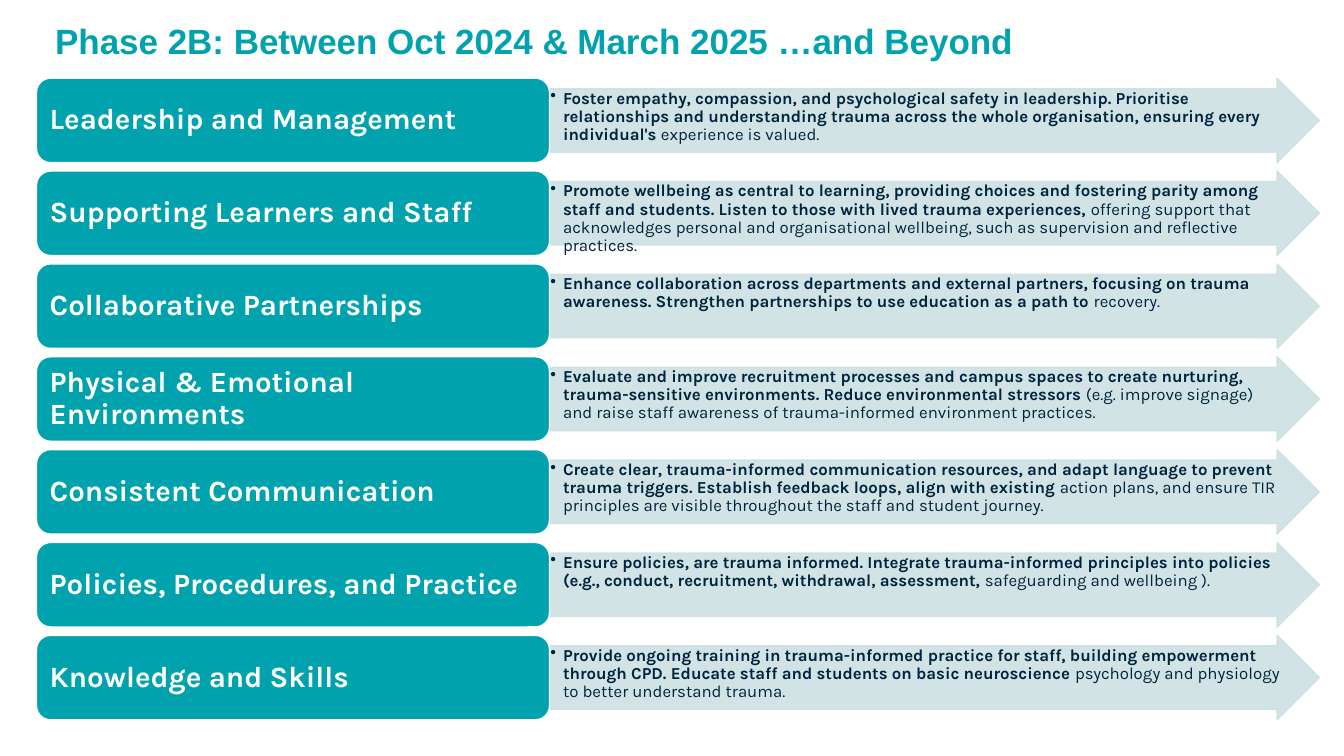
from lxml import etree
from pptx import Presentation
from pptx.dml.color import RGBColor
from pptx.enum.shapes import MSO_SHAPE
from pptx.enum.text import MSO_ANCHOR, PP_ALIGN
from pptx.oxml.ns import qn
from pptx.util import Cm, Pt

ARROW, ROUNDED = MSO_SHAPE.RIGHT_ARROW, MSO_SHAPE.ROUNDED_RECTANGLE
TOP, MIDDLE = MSO_ANCHOR.TOP, MSO_ANCHOR.MIDDLE
LEFT = PP_ALIGN.LEFT

COLOURS = {"teal": "00A2AD", "pale": "CCE0E3", "navy": "00243E", "white": "FFFFFF"}

# Row grid, in centimetres
FIRST_TOP, ROW_PITCH, ROW_HEIGHT = 1.97, 2.34, 2.13
THEME_LEFT, THEME_WIDTH = 0.92, 12.93
ACTION_LEFT, ACTION_WIDTH = 13.85, 19.4

TITLE = "Phase 2B: Between Oct 2024 & March 2025 …and Beyond"

# Theme, bold part of the action, plain part of the action
THEMES = [
    ("Leadership and Management",
     "Foster empathy, compassion, and psychological safety in leadership. Prioritise "
     "relationships and understanding trauma across the whole organisation, ensuring "
     "every individual's ",
     "experience is valued."),
    ("Supporting Learners and Staff",
     "Promote wellbeing as central to learning, providing choices and fostering parity "
     "among staff and students. Listen to those with lived trauma experiences, ",
     "offering support that acknowledges personal and organisational wellbeing, such as "
     "supervision and reflective practices."),
    ("Collaborative Partnerships",
     "Enhance collaboration across departments and external partners, focusing on trauma "
     "awareness. Strengthen partnerships to use education as a path to ",
     "recovery."),
    ("Physical & Emotional Environments",
     "Evaluate and improve recruitment processes and campus spaces to create nurturing, "
     "trauma-sensitive environments. Reduce environmental stressors ",
     "(e.g. improve signage) and raise staff awareness of trauma-informed environment "
     "practices."),
    ("Consistent Communication",
     "Create clear, trauma-informed communication resources, and adapt language to prevent "
     "trauma triggers. Establish feedback loops, align with existing ",
     "action plans, and ensure TIR principles are visible throughout the staff and student "
     "journey."),
    ("Policies, Procedures, and Practice",
     "Ensure policies, are trauma informed. Integrate trauma-informed principles into "
     "policies (e.g., conduct, recruitment, withdrawal, assessment, ",
     "safeguarding and wellbeing )."),
    ("Knowledge and Skills",
     "Provide ongoing training in trauma-informed practice for staff, building empowerment "
     "through CPD. Educate staff and students on basic neuroscience ",
     "psychology and physiology to better understand trauma."),
]


def rgb(name):
    return RGBColor.from_string(COLOURS[name])


def add_bullet(paragraph, indent):
    properties = paragraph._p.get_or_add_pPr()
    properties.set("marL", str(Cm(indent)))
    properties.set("indent", str(-Cm(indent)))
    etree.SubElement(properties, qn("a:buChar"), char="•")


def write(shape, bold_text, plain_text="", *, size, colour, font="Karla", anchor=MIDDLE,
          side_inset=0.23, end_inset=0.1, spacing=0.9, bullet_indent=None):
    frame = shape.text_frame
    frame.word_wrap = True
    frame.vertical_anchor = anchor
    frame.margin_left = frame.margin_right = Cm(side_inset)
    frame.margin_top = frame.margin_bottom = Cm(end_inset)
    paragraph = frame.paragraphs[0]
    if bullet_indent:
        add_bullet(paragraph, bullet_indent)
    paragraph.alignment = LEFT
    paragraph.line_spacing = spacing
    for text, bold in ((bold_text, True), (plain_text, False)):
        if text:
            run = paragraph.add_run()
            run.text = text
            run.font.name = font
            run.font.size = Pt(size)
            run.font.bold = bold
            run.font.color.rgb = rgb(colour)


def add_block(slide, preset, left, top, width, *, fill, line, opacity=None):
    block = slide.shapes.add_shape(preset, Cm(left), Cm(top), Cm(width), Cm(ROW_HEIGHT))
    block.shadow.inherit = False
    block.fill.solid()
    block.fill.fore_color.rgb = rgb(fill)
    block.line.color.rgb = rgb(line)
    block.line.width = Pt(1)
    if opacity:
        for colour in block._element.spPr.iter(qn("a:srgbClr")):
            etree.SubElement(colour, qn("a:alpha"), val=str(opacity * 1000))
    return block


def add_title(slide):
    title = slide.shapes.add_textbox(Cm(0.89), Cm(0.3), Cm(27.46), Cm(1.7))
    write(title, TITLE, size=25, colour="teal", font="Arial", side_inset=0.5, spacing=0.7)


def add_theme_row(slide, top, theme, key_action, detail):
    # Action arrow
    action = add_block(slide, ARROW, ACTION_LEFT, top, ACTION_WIDTH,
                       fill="pale", line="pale", opacity=90)
    action.adjustments[0] = 0.75
    action.adjustments[1] = 0.5
    write(action, key_action, detail, size=12, colour="navy", anchor=TOP,
          side_inset=0.02, end_inset=0.02, bullet_indent=0.32)

    # Theme label
    label = add_block(slide, ROUNDED, THEME_LEFT, top, THEME_WIDTH, fill="teal", line="white")
    write(label, theme, size=21, colour="white")


def main():
    presentation = Presentation()
    presentation.slide_width, presentation.slide_height = Cm(33.87), Cm(19.05)
    slide = presentation.slides.add_slide(presentation.slide_layouts[6])

    for row, (theme, key_action, detail) in enumerate(THEMES):
        add_theme_row(slide, FIRST_TOP + row * ROW_PITCH, theme, key_action, detail)
    add_title(slide)

    presentation.save("out.pptx")


if __name__ == "__main__":
    main()
